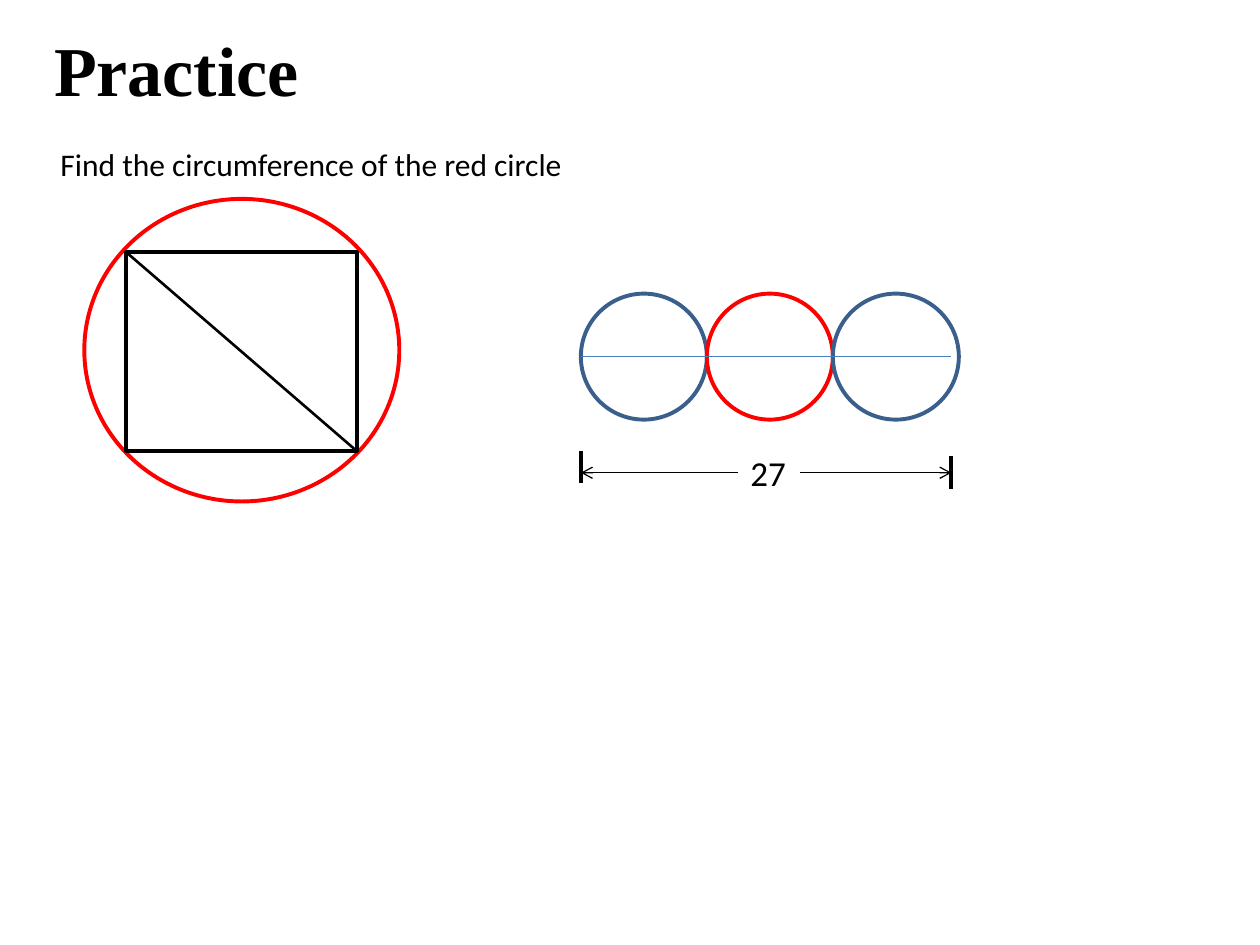
from lxml.etree import SubElement
from pptx import Presentation
from pptx.dml.color import RGBColor
from pptx.enum.shapes import MSO_CONNECTOR, MSO_SHAPE
from pptx.enum.text import MSO_ANCHOR, MSO_AUTO_SIZE, PP_ALIGN
from pptx.oxml.ns import qn
from pptx.util import Cm, Pt

BLACK, RED, BLUE, LIGHT_BLUE = "000000", "FF0000", "3A5F8C", "4B7EBC"


def color(value):
    return RGBColor.from_string(value)


def place(item, left, top, width, height):
    item.left, item.top = Cm(left), Cm(top)
    item.width, item.height = Cm(width), Cm(height)


def write(box, text, size, font="Calibri", bold=False):
    """Fill a text box or placeholder with one unwrapped, left-aligned line."""
    frame = box.text_frame
    frame.word_wrap = False
    frame.auto_size = MSO_AUTO_SIZE.SHAPE_TO_FIT_TEXT
    frame.vertical_anchor = MSO_ANCHOR.TOP
    paragraph = frame.paragraphs[0]
    paragraph.alignment = PP_ALIGN.LEFT
    span = paragraph.add_run()
    span.text = text
    span.font.name, span.font.size, span.font.bold = font, Pt(size), bold
    span.font.color.rgb = color(BLACK)


def add_text(page, text, left, top, width, height, **style):
    box = page.shapes.add_textbox(Cm(left), Cm(top), Cm(width), Cm(height))
    write(box, text, **style)
    return box


def add_outline(page, kind, left, top, width, height, line_color):
    shape = page.shapes.add_shape(kind, Cm(left), Cm(top), Cm(width), Cm(height))
    shape.shadow.inherit = False
    shape.fill.background()
    shape.line.color.rgb = color(line_color)
    shape.line.width = Pt(2.25)


def add_line(page, start, end, line_color=BLACK, width=0.75, arrow=False):
    line = page.shapes.add_connector(
        MSO_CONNECTOR.STRAIGHT, *(Cm(value) for value in (*start, *end)))
    line.line.color.rgb = color(line_color)
    line.line.width = Pt(width)
    if arrow:
        SubElement(line.line._get_or_add_ln(), qn("a:tailEnd"), type="arrow")
    SubElement(line._element.spPr, qn("a:effectLst"))
    return line


def draw_inscribed_rectangle(page):
    left, top, width, height = 2.54, 5.08, 4.65, 4.01
    add_outline(page, MSO_SHAPE.RECTANGLE, left, top, width, height, BLACK)
    add_line(page, (left, top), (left + width, top + height), width=1.5)


def draw_circle_row(page):
    left, right, top, diameter = 11.71, 19.18, 5.92, 2.54
    for index, line_color in enumerate((BLUE, RED, BLUE)):
        add_outline(page, MSO_SHAPE.OVAL, left + index * diameter, top,
                    diameter, diameter, line_color)

    for x, tick_top, tick_bottom in ((left, 9.09, 9.73), (right, 9.19, 9.86)):
        add_line(page, (x, tick_top), (x, tick_bottom), width=2.25)

    label = add_text(page, "27", 14.88, 8.97, 1.24, 1.12, size=20)
    arrow_y = 9.53
    for x, label_x, side in ((left, 14.88, 1), (right, 16.12, 3)):
        arrow = add_line(page, (label_x, arrow_y), (x, arrow_y), arrow=True)
        arrow.begin_connect(label, side)

    middle = top + diameter / 2
    add_line(page, (left, middle), (right, middle), LIGHT_BLUE)


def main():
    deck = Presentation()
    deck.slide_width, deck.slide_height = Cm(25.4), Cm(19.05)
    page = deck.slides.add_slide(deck.slide_layouts[5])

    title = page.shapes.title
    place(title, 0.84, 0.41, 5.49, 1.96)
    write(title, "Practice", size=40, font="Times New Roman", bold=True)

    add_outline(page, MSO_SHAPE.OVAL, 1.7, 4.01, 6.35, 6.1, RED)
    add_text(page, "Find the circumference of the red circle",
             0.97, 2.79, 10.74, 1.02, size=18)
    draw_inscribed_rectangle(page)
    draw_circle_row(page)
    deck.save("out.pptx")


if __name__ == "__main__":
    main()
